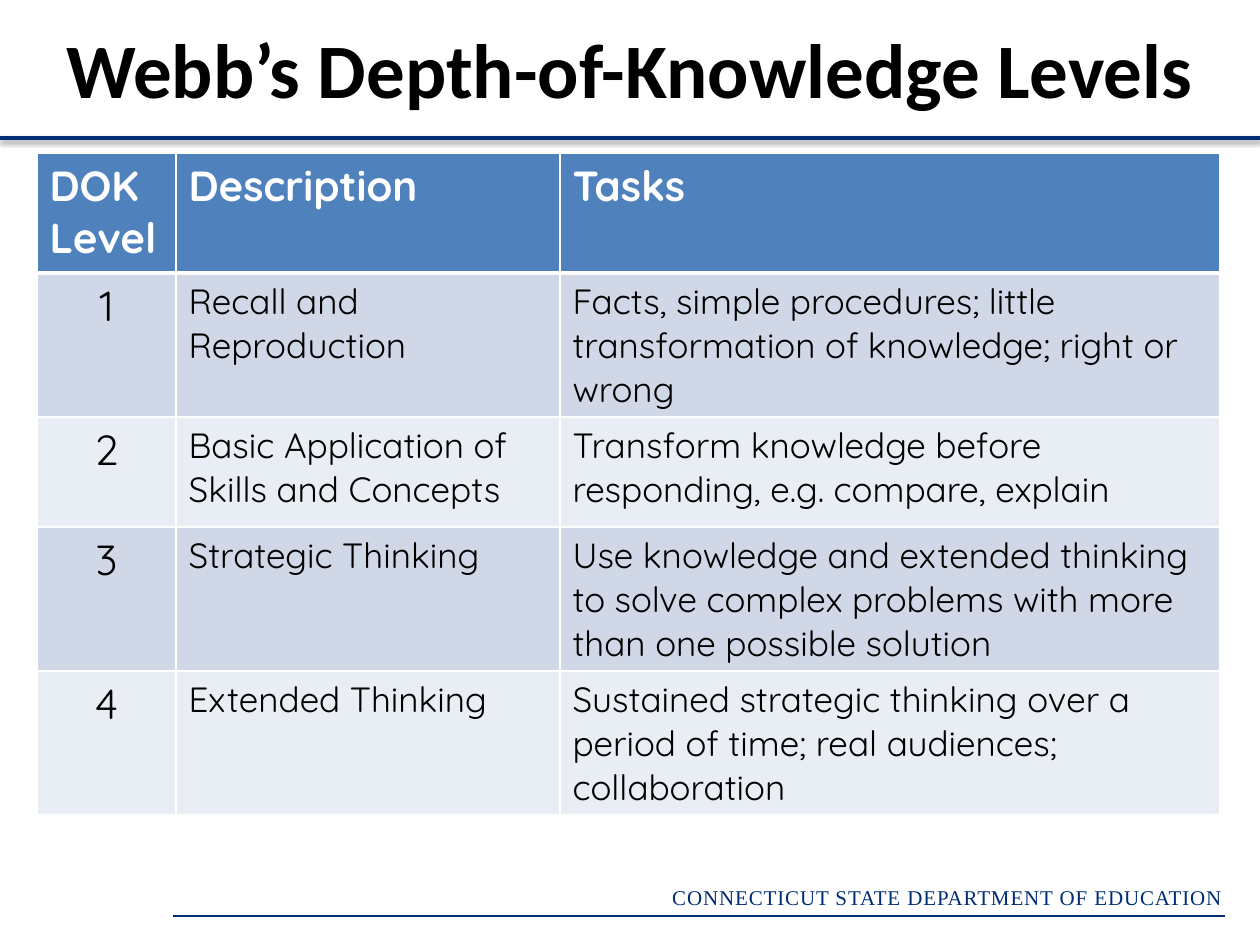
from lxml.etree import SubElement
from pptx import Presentation
from pptx.dml.color import RGBColor
from pptx.enum.shapes import MSO_CONNECTOR
from pptx.enum.text import MSO_ANCHOR, PP_ALIGN
from pptx.oxml.ns import qn
from pptx.util import Emu, Pt

PX = 914400 / 126
NAVY, WHITE, BLACK = "002D73", "FFFFFF", "000000"


def px(n):
    return Emu(round(n * PX))


def add_run(para, text, font, size, color, bold=False):
    run = para.add_run()
    run.text = text
    run.font.name = font
    run.font.size = Pt(size)
    run.font.bold = bold
    run.font.color.rgb = RGBColor.from_string(color)
    return run


prs = Presentation()
prs.slide_width, prs.slide_height = px(1260), px(945)
slide = prs.slides.add_slide(prs.slide_layouts[5])
shapes = slide.shapes

# Title
title = shapes.title
title.left, title.top, title.width, title.height = px(0), px(24), px(1260), px(88)
title.text_frame.vertical_anchor = MSO_ANCHOR.MIDDLE
para = title.text_frame.paragraphs[0]
para.alignment = PP_ALIGN.CENTER
add_run(para, "Webb’s Depth-of-Knowledge Levels", "Calibri", 44, BLACK, True)

# Footer
foot = shapes.add_textbox(px(653), px(878), px(582), px(38)).text_frame
foot.word_wrap = True
para = foot.paragraphs[0]
para.alignment = PP_ALIGN.RIGHT
run = add_run(para, "CONNECTICUT STATE DEPARTMENT OF EDUCATION",
              "Times New Roman", 12, NAVY)
run.font._element.set("spc", "50")

# Table of levels
rows = [
    ("DOK\nLevel", "Description", "Tasks"),
    ("1", "Recall and Reproduction",
     "Facts, simple procedures; little transformation of knowledge; right or wrong"),
    ("2", "Basic Application of Skills and Concepts",
     "Transform knowledge before responding, e.g. compare, explain"),
    ("3", "Strategic Thinking",
     "Use knowledge and extended thinking to solve complex problems "
     "with more than one possible solution"),
    ("4", "Extended Thinking",
     "Sustained strategic thinking over a period of time; real audiences; collaboration"),
]
widths = (139, 384, 660)
heights = (120, 144, 110, 144, 144)
table = shapes.add_table(len(rows), len(widths), px(37), px(153),
                         px(sum(widths)), px(sum(heights))).table
for col, width in zip(table.columns, widths):
    col.width = px(width)
for row, height in zip(table.rows, heights):
    row.height = px(height)

for r, texts in enumerate(rows):
    head = r == 0
    fill = "4F81BD" if head else ("E9EDF4", "D0D8E8")[r % 2]
    for c, text in enumerate(texts):
        cell = table.cell(r, c)
        frame = cell.text_frame
        for i, line in enumerate(text.split("\n")):
            para = frame.add_paragraph() if i else frame.paragraphs[0]
            if c == 0 and not head:
                para.alignment = PP_ALIGN.CENTER
            size = 24 if head or c == 0 else 20
            add_run(para, line, "Quicksand", size, WHITE if head else BLACK, head)
        # Borders come before the fill in the cell properties
        props = cell._tc.get_or_add_tcPr()
        for side in "LRTB":
            thick = (head and side == "B") or (r == 1 and side == "T")
            edge = SubElement(props, qn(f"a:ln{side}"), w=str(Pt(3 if thick else 1)))
            SubElement(SubElement(edge, qn("a:solidFill")), qn("a:srgbClr"), val=WHITE)
        cell.fill.solid()
        cell.fill.fore_color.rgb = RGBColor.from_string(fill)

# Footer rule, and title rule with its shadow
for left, right, y, weight, shade in ((173, 1225, 916, 0.75, False),
                                      (0, 1260, 138, 2, True)):
    rule = shapes.add_connector(MSO_CONNECTOR.STRAIGHT, px(left), px(y), px(right), px(y))
    rule.line.color.rgb = RGBColor.from_string(NAVY)
    rule.line.width = Pt(weight)
    effects = SubElement(rule._element.spPr, qn("a:effectLst"))
    if shade:
        shadow = SubElement(effects, qn("a:outerShdw"), blurRad=str(Pt(3.1)),
                            dist=str(Pt(1.6)), dir="5400000", rotWithShape="0")
        color = SubElement(shadow, qn("a:srgbClr"), val=BLACK)
        SubElement(color, qn("a:alpha"), val="38000")

prs.save("out.pptx")
